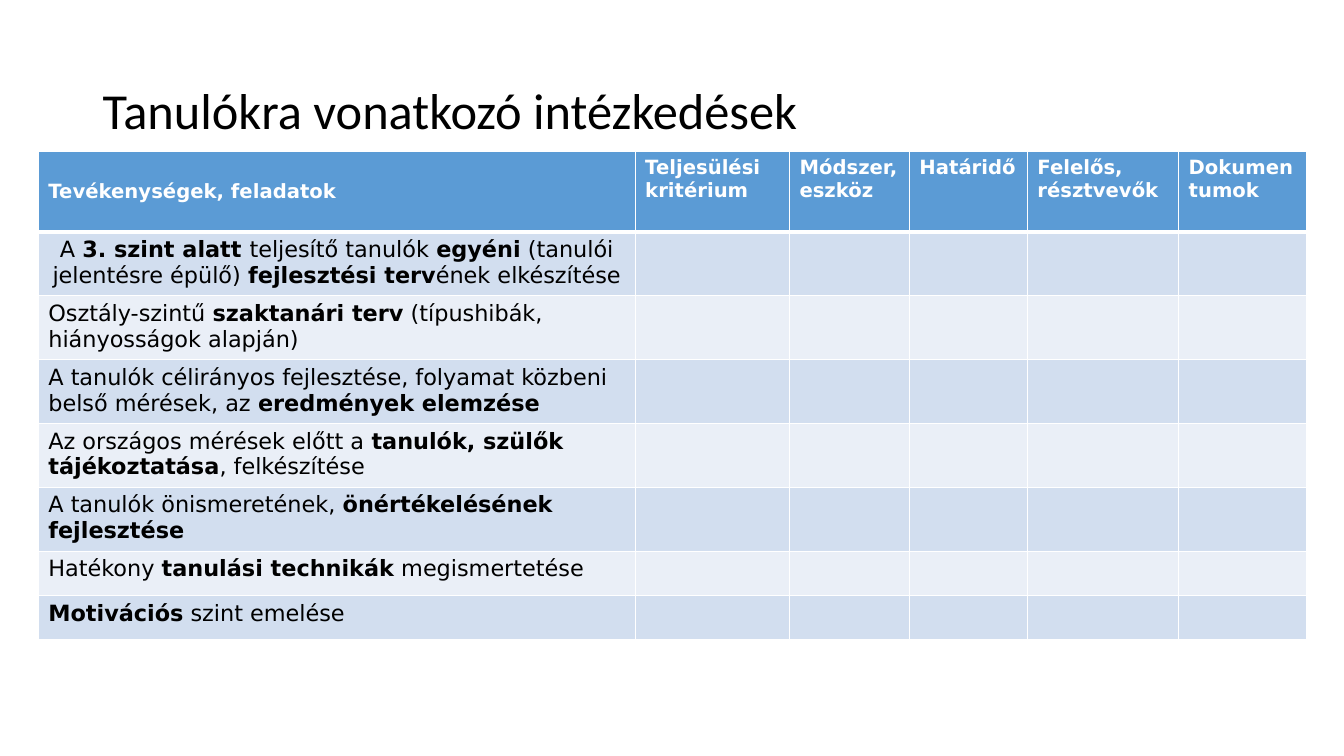
from lxml.etree import SubElement
from pptx import Presentation
from pptx.dml.color import RGBColor
from pptx.enum.text import MSO_ANCHOR, PP_ALIGN
from pptx.oxml.ns import qn
from pptx.util import Inches, Pt

TITLE = "Tanulókra vonatkozó intézkedések"
HEADERS = ["Tevékenységek, feladatok", "Teljesülési kritérium", "Módszer, eszköz",
           "Határidő", "Felelős, résztvevők", "Dokumentumok"]
# Each task is a list of (text, bold) runs.
TASKS = [
    [("A ", False), ("3. szint alatt ", True), ("teljesítő tanulók ", False), ("egyéni", True),
     (" (tanulói jelentésre épülő) ", False), ("fejlesztési terv", True),
     ("ének elkészítése", False)],
    [("Osztály-szintű ", False), ("szaktanári terv", True),
     (" (típushibák, hiányosságok alapján)", False)],
    [("A tanulók célirányos fejlesztése, folyamat közbeni belső mérések, az ", False),
     ("eredmények elemzése", True)],
    [("Az országos mérések előtt a ", False), ("tanulók, szülők tájékoztatása", True),
     (", felkészítése", False)],
    [("A tanulók önismeretének, ", False), ("önértékelésének fejlesztése", True)],
    [("Hatékony ", False), ("tanulási technikák", True), (" megismertetése", False)],
    [("Motivációs", True), (" szint emelése", False)],
]
COLUMN_WIDTHS = [5.92, 1.53, 1.19, 1.17, 1.5, 1.27]
HEADER_HEIGHT, TASK_HEIGHT = 0.8, 0.44
TABLE_LEFT, TABLE_TOP = 0.38, 1.5

THEME = {
    "title": {"name": "Calibri", "size": Pt(36), "color": "000000"},
    "header": {"name": "DejaVu Sans", "size": Pt(14), "color": "FFFFFF", "bold": True},
    "task": {"name": "DejaVu Sans", "size": Pt(16), "color": "000000"},
    "header_fill": "5B9BD5",
    "band_fills": ["D2DEEF", "EAEFF7"],
    "border": "FFFFFF",
    "thin": Pt(1),
    "thick": Pt(3),
}


def add_run(paragraph, text, formats):
    run = paragraph.add_run()
    run.text = text
    for name, value in formats.items():
        if name == "color":
            run.font.color.rgb = RGBColor.from_string(value)
        else:
            setattr(run.font, name, value)


def style_cell(cell, fill, top, bottom):
    """Draw the four borders, then the fill, in the order the schema requires."""
    properties = cell._tc.get_or_add_tcPr()
    widths = {"lnL": THEME["thin"], "lnR": THEME["thin"], "lnT": top, "lnB": bottom}
    for side, width in widths.items():
        line = SubElement(properties, qn(f"a:{side}"), w=str(width))
        solid = SubElement(line, qn("a:solidFill"))
        SubElement(solid, qn("a:srgbClr"), val=THEME["border"])
    cell.fill.solid()
    cell.fill.fore_color.rgb = RGBColor.from_string(fill)


def add_title(slide):
    box = slide.shapes.add_textbox(Inches(0.92), Inches(0.4), Inches(11.5), Inches(1.45))
    frame = box.text_frame
    frame.word_wrap = True
    frame.vertical_anchor = MSO_ANCHOR.MIDDLE
    paragraph = frame.paragraphs[0]
    paragraph.line_spacing = 0.9
    add_run(paragraph, TITLE, THEME["title"])


def add_task_table(slide):
    heights = [HEADER_HEIGHT] + [TASK_HEIGHT] * len(TASKS)
    table = slide.shapes.add_table(
        len(heights), len(HEADERS), Inches(TABLE_LEFT), Inches(TABLE_TOP),
        Inches(sum(COLUMN_WIDTHS)), Inches(sum(heights))).table
    for column, width in zip(table.columns, COLUMN_WIDTHS):
        column.width = Inches(width)
    for row, height in zip(table.rows, heights):
        row.height = Inches(height)

    for cell, header in zip(table.rows[0].cells, HEADERS):
        style_cell(cell, THEME["header_fill"], THEME["thin"], THEME["thick"])
        add_run(cell.text_frame.paragraphs[0], header, THEME["header"])
    table.cell(0, 0).vertical_anchor = MSO_ANCHOR.MIDDLE

    for index, task in enumerate(TASKS):
        cells = list(table.rows[index + 1].cells)
        top = THEME["thin"] if index else THEME["thick"]
        for cell in cells:
            style_cell(cell, THEME["band_fills"][index % 2], top, THEME["thin"])
        for text, bold in task:
            add_run(cells[0].text_frame.paragraphs[0], text, {**THEME["task"], "bold": bold})
    table.cell(1, 0).text_frame.paragraphs[0].alignment = PP_ALIGN.CENTER


def main():
    presentation = Presentation()
    presentation.slide_width = Inches(13.33)
    presentation.slide_height = Inches(7.5)
    slide = presentation.slides.add_slide(presentation.slide_layouts[6])
    add_title(slide)
    add_task_table(slide)
    presentation.save("out.pptx")


if __name__ == "__main__":
    main()
